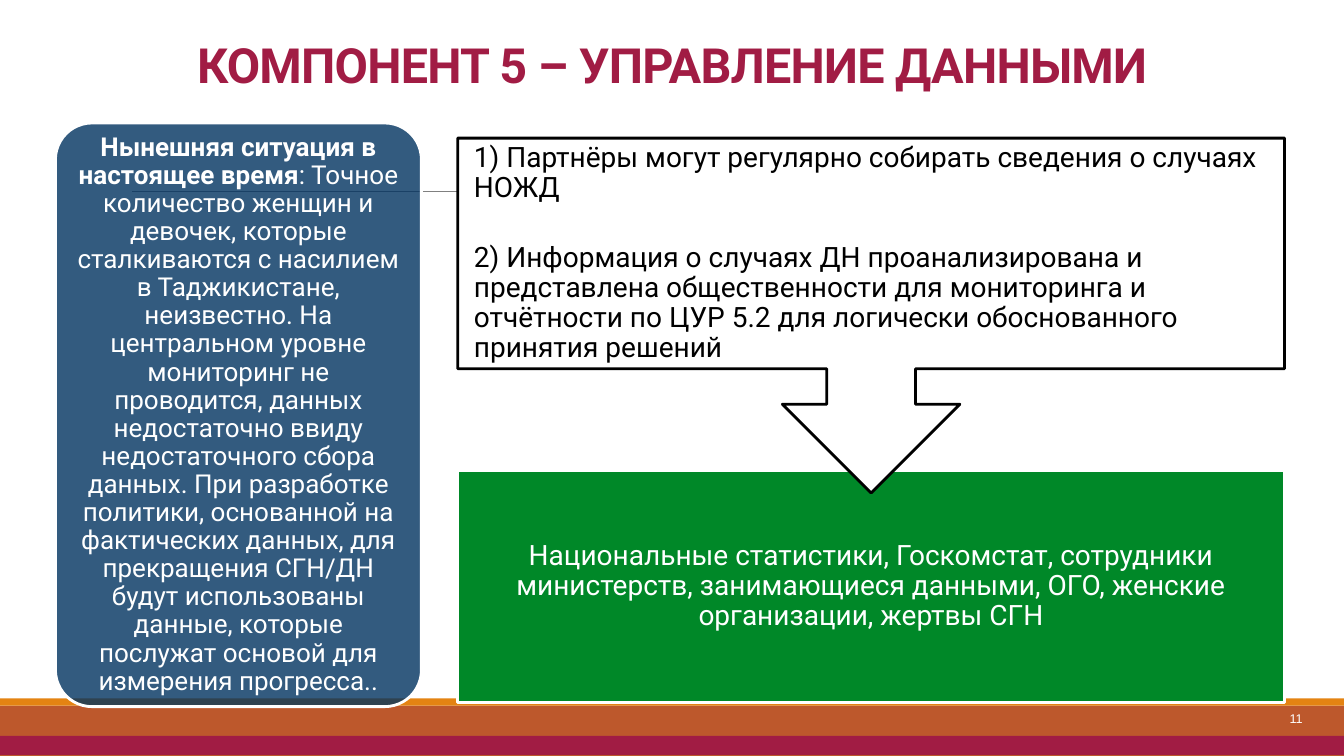
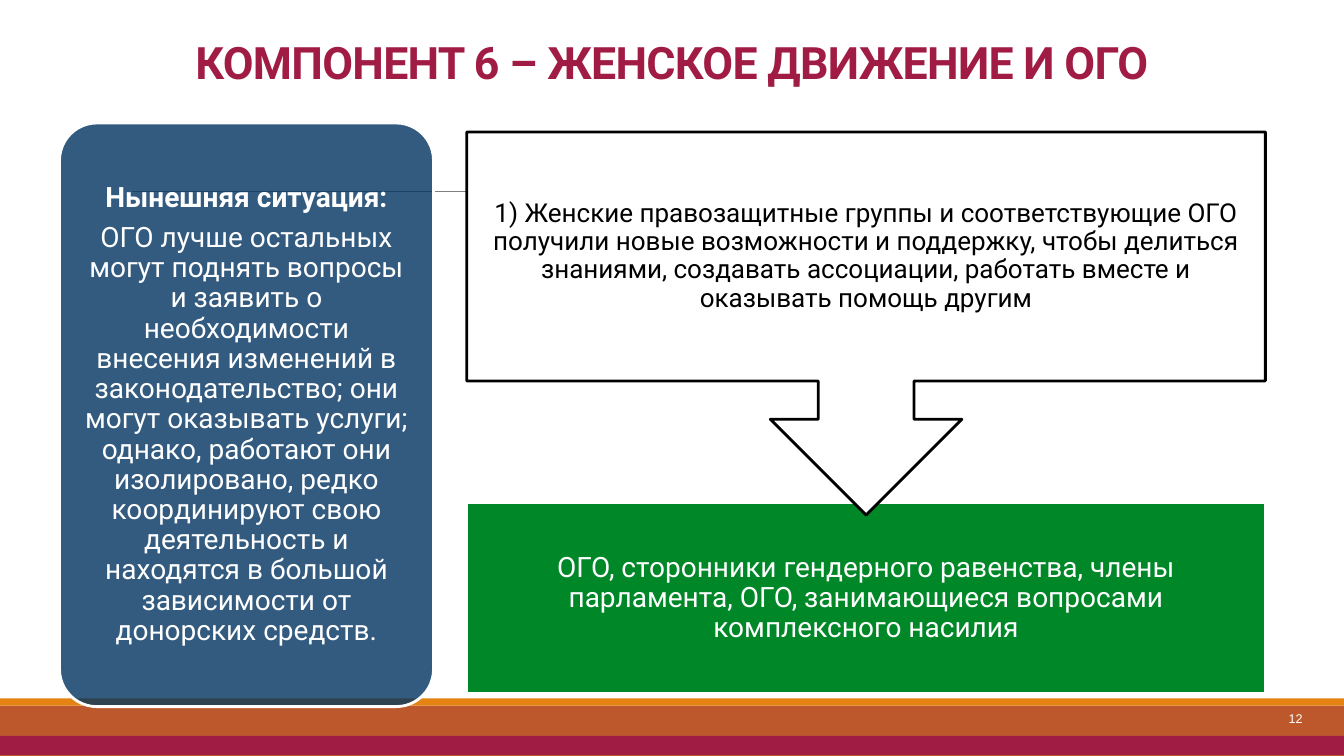
from lxml import etree
from pptx import Presentation
from pptx.dml.color import RGBColor
from pptx.enum.shapes import MSO_CONNECTOR, MSO_SHAPE
from pptx.enum.text import MSO_ANCHOR, MSO_AUTO_SIZE, PP_ALIGN
from pptx.oxml.ns import qn
from pptx.util import Emu, Pt

PX = 9144
WIDTH, HEIGHT = 1333, 750
TITLE_ONLY = 5
RECT = MSO_SHAPE.RECTANGLE
ROUNDED = MSO_SHAPE.ROUNDED_RECTANGLE
CALLOUT = MSO_SHAPE.DOWN_ARROW_CALLOUT
STRAIGHT = MSO_CONNECTOR.STRAIGHT
TOP, MIDDLE = MSO_ANCHOR.TOP, MSO_ANCHOR.MIDDLE
LEFT, CENTER, RIGHT = PP_ALIGN.LEFT, PP_ALIGN.CENTER, PP_ALIGN.RIGHT
NO_FIT = MSO_AUTO_SIZE.NONE

COLORS = {
    "white": "FFFFFF",
    "black": "000000",
    "crimson": "A11C44",
    "rust": "BD582C",
    "orange": "E48312",
    "gray": "808080",
    "navy": "013260",
    "green": "008828",
}


def px(*lengths):
    return [Emu(length * PX) for length in lengths]


def rgb(name):
    return RGBColor.from_string(COLORS[name])


class Deck:
    font = "Roboto"
    bands = (("rust", 700, 50), ("orange", 693, 7), ("crimson", 730, 19))

    def __init__(self):
        self.prs = Presentation()
        self.prs.slide_width, self.prs.slide_height = px(WIDTH, HEIGHT)
        self.slide = None

    def new_slide(self, title, title_size, number):
        self.slide = self.prs.slides.add_slide(self.prs.slide_layouts[TITLE_ONLY])
        for color, top, height in self.bands:
            self.box(RECT, (0, top, WIDTH, height), color)
        self.rule(131, 190, 1221)
        self.page_number(number)
        self.title(title, title_size)

    def fill_text(self, frame, paragraphs, size, color, insets, align=CENTER,
                  anchor=MIDDLE, font=font, spacing=0.9, gap=7, bold_lead=False):
        frame.word_wrap = True
        frame.auto_size = NO_FIT
        frame.vertical_anchor = anchor
        side, edge = px(*insets)
        frame.margin_left = frame.margin_right = side
        frame.margin_top = frame.margin_bottom = edge
        for index, parts in enumerate(paragraphs):
            paragraph = frame.add_paragraph() if index else frame.paragraphs[0]
            paragraph.text = parts[0]
            for part in parts[1:]:
                paragraph.add_run().text = part
            paragraph.alignment = align
            paragraph.line_spacing = spacing
            paragraph.space_before = Pt(gap if index else 0)
            for position, run in enumerate(paragraph.runs):
                run.font.name = font
                run.font.size = Pt(size)
                run.font.bold = bold_lead and index == position == 0
                run.font.color.rgb = rgb(color)

    def title(self, text, size):
        title = self.slide.shapes.title
        title.left, title.top, title.width, title.height = px(59, 26, 1215, 52)
        self.fill_text(title.text_frame, [[text]], size, "crimson", (13, 9),
                       anchor=TOP, spacing=1.0, bold_lead=True)
        for run in title.text_frame.paragraphs[0].runs:
            run.font._element.set("spc", "-50")

    def page_number(self, number):
        footer = self.slide.shapes.add_textbox(*px(1258, 701, 47, 23))
        self.fill_text(footer.text_frame, [[str(number)]], 9, "white", (13, 7),
                       align=RIGHT, font="Arial", spacing=1.0)

    def rule(self, left, top, right):
        rule = self.slide.shapes.add_connector(STRAIGHT, *px(left, top, right, top))
        rule.line.color.rgb = rgb("gray")
        rule.line.width = Pt(0.5)
        etree.SubElement(rule._element.spPr, qn("a:effectLst"))

    def box(self, preset, place, fill, outline=None):
        box = self.slide.shapes.add_shape(preset, *px(*place))
        box.shadow.inherit = False
        box.fill.solid()
        box.fill.fore_color.rgb = rgb(fill)
        if outline:
            box.line.color.rgb = rgb(outline)
            box.line.width = Pt(2)
        else:
            box.line.fill.background()
        return box

    def situation(self, place, paragraphs, size):
        panel = self.box(ROUNDED, place, "navy", "white")
        panel.adjustments[0] = 0.1
        tint = panel._element.spPr.find(qn("a:solidFill"))[0]
        etree.SubElement(tint, qn("a:alpha"), val="80000")
        self.fill_text(panel.text_frame, paragraphs, size, "white", (8, 8),
                       bold_lead=True)

    def actors(self, place, text):
        panel = self.box(RECT, place, "green", "white")
        self.fill_text(panel.text_frame, [[text]], 20, "white", (16, 16))

    def outcomes(self, place, paragraphs, size, inset, align=CENTER):
        callout = self.box(CALLOUT, place, "white", "black")
        for index, share in enumerate((0.25, 0.25, 0.25, 0.65)):
            callout.adjustments[index] = share
        self.fill_text(callout.text_frame, paragraphs, size, "black", (inset, inset),
                       align=align, gap=28)

    def save(self):
        self.prs.save("out.pptx")


def main():
    deck = Deck()

    deck.new_slide("КОМПОНЕНТ 5 – УПРАВЛЕНИЕ ДАННЫМИ", 34.6, 11)
    deck.situation((55, 122, 363, 579), [[
        "Нынешняя ситуация в настоящее время",
        ": Точное количество женщин и девочек, которые сталкиваются с насилием "
        "в Таджикистане, неизвестно. На центральном уровне мониторинг не проводится, "
        "данных недостаточно ввиду недостаточного сбора данных. При разработке политики, "
        "основанной на фактических данных, для прекращения СГН/ДН будут использованы "
        "данные, которые послужат основой для измерения прогресса..",
    ]], 18.6)
    deck.actors((454, 467, 820, 230),
                "Национальные статистики, Госкомстат, сотрудники министерств, "
                "занимающиеся данными, ОГО, женские организации, жертвы СГН")
    deck.outcomes((454, 137, 820, 352), [
        ["1) Партнёры могут регулярно собирать сведения о случаях НОЖД"],
        ["2) Информация о случаях ДН проанализирована и представлена общественности "
         "для мониторинга и отчётности по ЦУР 5.2 для логически обоснованного "
         "принятия решений"],
    ], 20, 16, LEFT)

    deck.new_slide("КОМПОНЕНТ 6 – ЖЕНСКОЕ ДВИЖЕНИЕ И ОГО", 31.9, 12)
    deck.situation((59, 122, 371, 579), [
        ["Нынешняя ситуация:"],
        ["ОГО лучше остальных могут поднять вопросы и заявить о необходимости внесения "
         "изменений в законодательство; они могут оказывать услуги; однако, работают они "
         "изолировано, редко координируют свою деятельность и находятся в большой "
         "зависимости от донорских средств."],
    ], 20)
    deck.actors((463, 499, 792, 189),
                "ОГО, сторонники гендерного равенства, члены парламента, ОГО, "
                "занимающиеся вопросами комплексного насилия")
    deck.outcomes((463, 131, 792, 380), [
        ["1) Женские правозащитные группы и соответствующие ОГО получили новые "
         "возможности и поддержку, чтобы делиться знаниями, создавать ассоциации, "
         "работать вместе и оказывать помощь другим"],
    ], 18.6, 14)

    deck.save()


if __name__ == "__main__":
    main()
